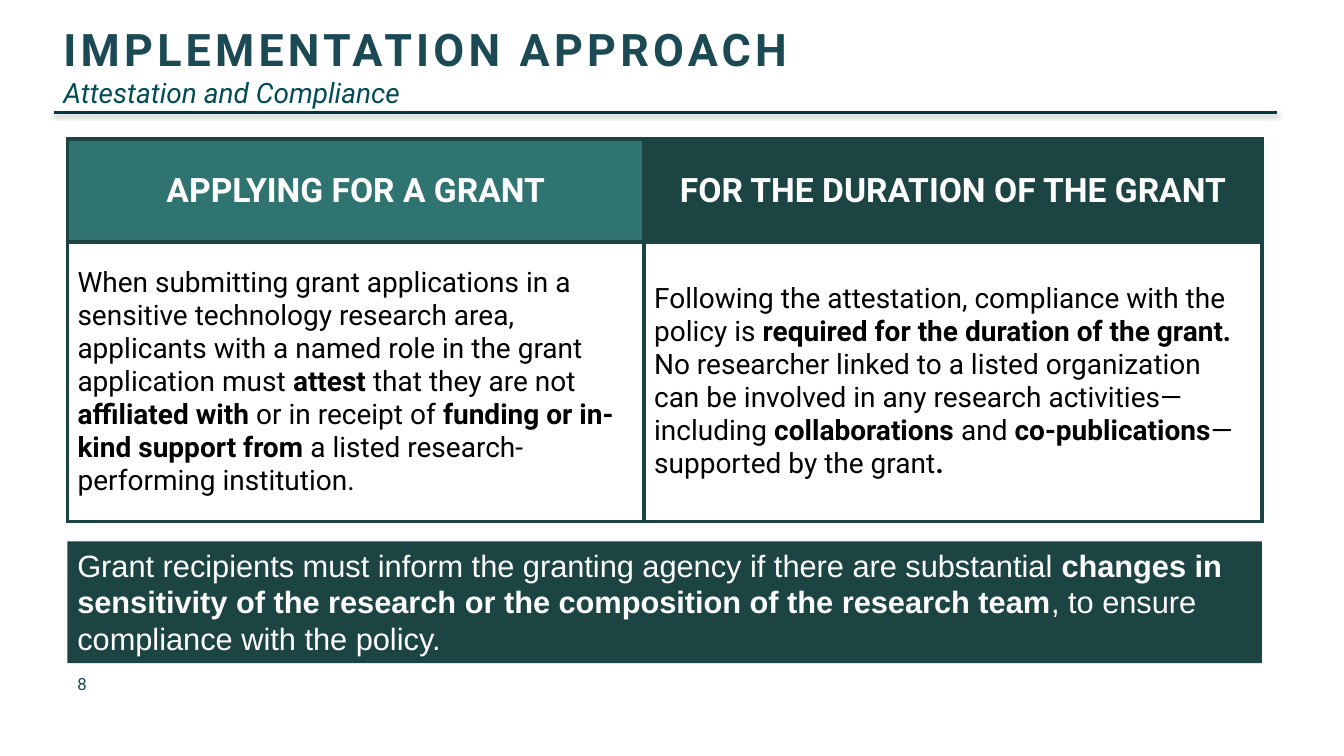
from lxml.etree import SubElement
from pptx import Presentation
from pptx.dml.color import RGBColor
from pptx.enum.shapes import MSO_CONNECTOR, MSO_SHAPE
from pptx.enum.text import MSO_ANCHOR as Anchor, PP_ALIGN as Align
from pptx.oxml.ns import qn
from pptx.util import Cm, Pt

DARK_GREEN = "1C4443"
TEAL = "307472"
TITLE_BLUE = "1B4954"
SUBTITLE_BLUE = "024C57"
RULE_BLUE = "023940"
WHITE = "FFFFFF"
BLACK = "000000"

LEFT, WIDTH = 1.7, 30.1
COLUMN_WIDTHS = (14.53, 15.57)
ROW_HEIGHTS = (2.59, 7.04)

HEADINGS = (
    ("APPLYING FOR A GRANT", TEAL),
    ("FOR THE DURATION OF THE GRANT", DARK_GREEN),
)
BODIES = (
    (
        ("When submitting grant applications in a sensitive technology research area, "
         "applicants with a named role in the grant application must ", False),
        ("attest ", True),
        ("that they are not ", False),
        ("affiliated with ", True),
        ("or in receipt of ", False),
        ("funding or in-kind support from", True),
        (" a listed research-performing institution.", False),
    ),
    (
        ("Following the attestation, compliance with the policy is ", False),
        ("required for the duration of the grant. ", True),
        ("No researcher linked to a listed organization can be involved in any "
         "research activities—including ", False),
        ("collaborations ", True),
        ("and ", False),
        ("co-publications", True),
        ("—supported by the grant", False),
        (".", True),
    ),
)
NOTICE = (
    ("Grant recipients must inform the granting agency if there are substantial ", False),
    ("changes in sensitivity of the research or the composition of the research team", True),
    (", to ensure compliance with the policy.", False),
)


def color(value):
    return RGBColor.from_string(value)


class SlideBuilder:
    font_name = "Roboto"

    def __init__(self, presentation):
        self.slide = presentation.slides.add_slide(presentation.slide_layouts[6])

    def add_run(self, paragraph, text, size, ink, bold=False, italic=False, font_name=None):
        run = paragraph.add_run()
        run.text = text
        run.font.name = font_name or self.font_name
        run.font.size = Pt(size)
        run.font.bold = bold
        run.font.italic = italic
        run.font.color.rgb = color(ink)
        return run

    def add_runs(self, paragraph, runs, size, ink, font_name=None):
        for text, bold in runs:
            self.add_run(paragraph, text, size, ink, bold, font_name=font_name)

    def add_text_box(self, left, top, width, height, anchor=Anchor.TOP):
        frame = self.slide.shapes.add_textbox(Cm(left), Cm(top), Cm(width), Cm(height)).text_frame
        frame.word_wrap = True
        frame.vertical_anchor = anchor
        return frame.paragraphs[0]

    def add_title(self, title, subtitle):
        paragraph = self.add_text_box(1.35, 0.43, WIDTH, 2.49)
        run = self.add_run(paragraph, title, 32, TITLE_BLUE, bold=True)
        run.font._element.set("spc", "300")
        paragraph.add_line_break()
        self.add_run(paragraph, subtitle, 20, SUBTITLE_BLUE, italic=True)

    def add_rule(self, left, right, top):
        line = self.slide.shapes.add_connector(
            MSO_CONNECTOR.STRAIGHT, Cm(left), Cm(top), Cm(right), Cm(top))
        line.line.color.rgb = color(RULE_BLUE)
        line.line.width = Pt(2)
        properties = line._element.find(qn("p:spPr"))
        effects = SubElement(properties, qn("a:effectLst"))
        shadow = SubElement(effects, qn("a:outerShdw"), blurRad=str(Pt(3.1)),
                            dist=str(Pt(1.6)), dir="5400000", rotWithShape="0")
        shade = SubElement(shadow, qn("a:srgbClr"), val=BLACK)
        SubElement(shade, qn("a:alpha"), val="38000")

    def add_banner(self, top, height, runs):
        shape = self.slide.shapes.add_shape(
            MSO_SHAPE.RECTANGLE, Cm(LEFT), Cm(top), Cm(WIDTH), Cm(height))
        shape.shadow.inherit = False
        shape.fill.solid()
        shape.fill.fore_color.rgb = color(DARK_GREEN)
        shape.line.fill.background()
        shape.text_frame.word_wrap = True
        shape.text_frame.vertical_anchor = Anchor.TOP
        paragraph = shape.text_frame.paragraphs[0]
        paragraph.alignment = Align.LEFT
        self.add_runs(paragraph, runs, 22, WHITE, "Arial")

    def style_cell(self, cell, fill=None):
        cell.vertical_anchor = Anchor.MIDDLE
        properties = cell._tc.get_or_add_tcPr()
        for side in ("a:lnL", "a:lnR", "a:lnT", "a:lnB"):
            border = SubElement(properties, qn(side), w=str(Pt(3)))
            paint = SubElement(border, qn("a:solidFill"))
            SubElement(paint, qn("a:srgbClr"), val=DARK_GREEN)
        if fill:
            cell.fill.solid()
            cell.fill.fore_color.rgb = color(fill)
        else:
            cell.fill.background()

    def add_table(self, top, headings, bodies):
        table = self.slide.shapes.add_table(
            len(ROW_HEIGHTS), len(COLUMN_WIDTHS), Cm(LEFT), Cm(top),
            Cm(WIDTH), Cm(sum(ROW_HEIGHTS))).table
        table.first_row = False
        table.horz_banding = False
        for row, height in zip(table.rows, ROW_HEIGHTS):
            row.height = Cm(height)
        for column, width in enumerate(COLUMN_WIDTHS):
            table.columns[column].width = Cm(width)
            heading, fill = headings[column]
            head_cell, body_cell = table.cell(0, column), table.cell(1, column)
            self.style_cell(head_cell, fill)
            self.style_cell(body_cell)
            paragraph = head_cell.text_frame.paragraphs[0]
            paragraph.alignment = Align.CENTER
            self.add_run(paragraph, heading, 24, WHITE, bold=True)
            self.add_runs(body_cell.text_frame.paragraphs[0], bodies[column], 20, BLACK)

    def add_page_number(self, number):
        paragraph = self.add_text_box(LEFT, 16.71, 3.63, 1.02, Anchor.MIDDLE)
        self.add_run(paragraph, number, 12, TITLE_BLUE)


def main():
    presentation = Presentation()
    presentation.slide_width = Cm(33.87)
    presentation.slide_height = Cm(19.05)
    builder = SlideBuilder(presentation)
    builder.add_page_number("8")
    builder.add_banner(13.64, 3.07, NOTICE)
    builder.add_table(3.51, HEADINGS, BODIES)
    builder.add_rule(1.35, 32.18, 2.84)
    builder.add_title("IMPLEMENTATION APPROACH", "Attestation and Compliance")
    presentation.save("out.pptx")


if __name__ == "__main__":
    main()
